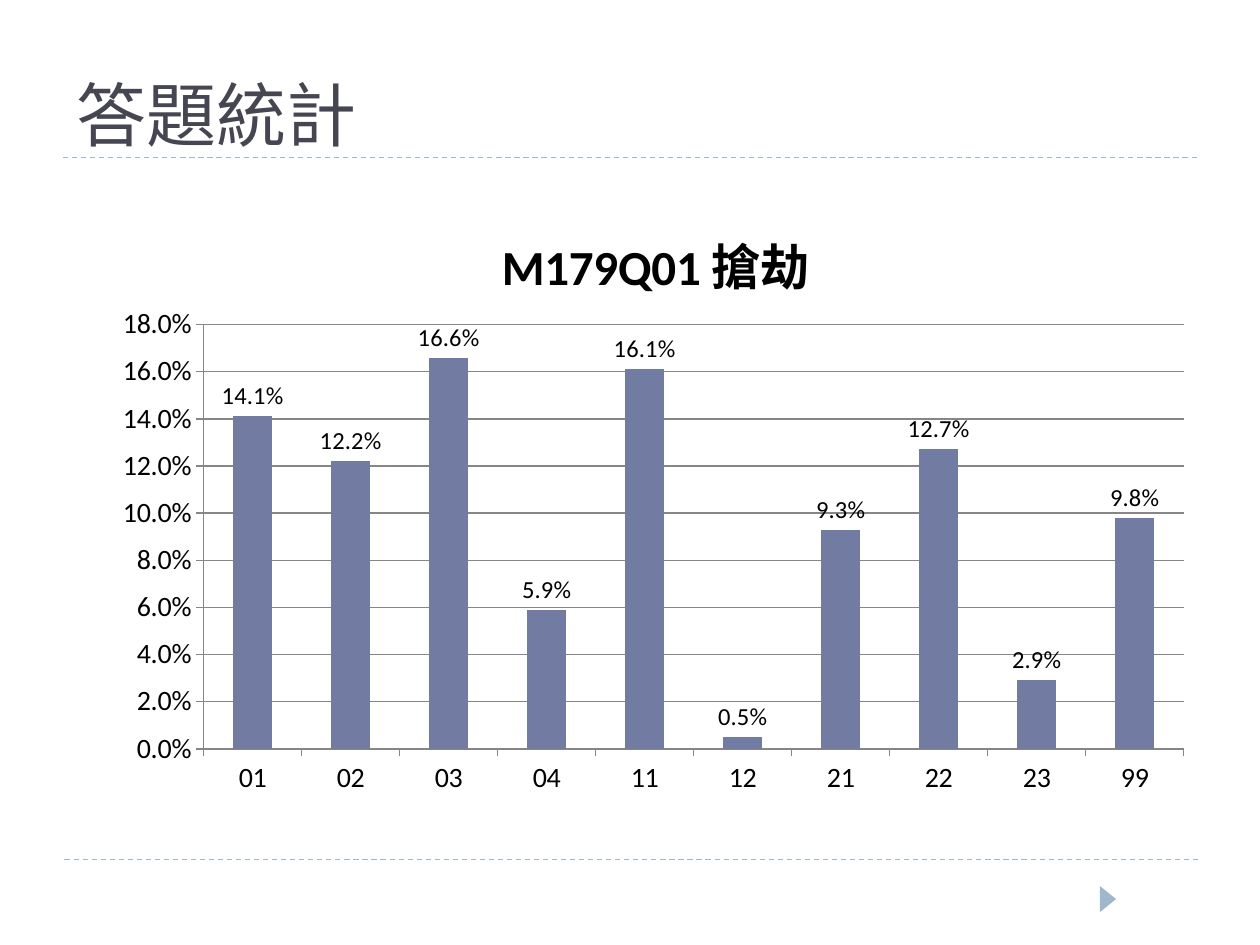
"""Build the answer statistics slide with its column chart."""
import pptx
import pptx.chart.data
import pptx.dml.color
import pptx.enum.chart
import pptx.enum.dml
import pptx.enum.shapes
import pptx.enum.text
import pptx.oxml
import pptx.oxml.ns
import pptx.util
from pptx.util import Cm

RGBColor = pptx.dml.color.RGBColor
PALE_BLUE = RGBColor(0x9F, 0xB8, 0xCD)
SLATE = RGBColor(0x46, 0x46, 0x53)
BAR_BLUE = RGBColor(0x72, 0x7C, 0xA3)
GRID_GRAY = RGBColor(0x86, 0x86, 0x86)
BLACK = RGBColor(0, 0, 0)
PERCENT = "0.0%"
PLOT_LAYOUT = {"x": 0.09, "y": 0.21, "w": 0.89, "h": 0.69}
ANSWERS = {
    "01": 0.141, "02": 0.122, "03": 0.166, "04": 0.059, "11": 0.161,
    "12": 0.005, "21": 0.093, "22": 0.127, "23": 0.029, "99": 0.098,
}


def apply(target, values):
    for name, value in values.items():
        setattr(target, name, value)


class SlideBuilder:
    def __init__(self, deck):
        self.page = deck.slides.add_slide(deck.slide_layouts[6])

    def font(self, font, size, color=BLACK, name="Calibri", bold=False):
        apply(font, {"size": pptx.util.Pt(size), "name": name, "bold": bold})
        font.color.rgb = color

    def rule(self, left, top, width):
        line = self.page.shapes.add_connector(
            pptx.enum.shapes.MSO_CONNECTOR.STRAIGHT, left, top, left + width, top)
        line.line.color.rgb = PALE_BLUE
        apply(line.line, {"width": pptx.util.Pt(0.75),
                          "dash_style": pptx.enum.dml.MSO_LINE.DASH})
        line._element.spPr.append(pptx.oxml.parse_xml(
            f"<a:effectLst {pptx.oxml.ns.nsdecls('a')}/>"))

    def marker(self, left, top, width, height):
        shape = self.page.shapes.add_shape(
            pptx.enum.shapes.MSO_SHAPE.ISOSCELES_TRIANGLE, left, top, width, height)
        shape.rotation = 90
        shape.shadow.inherit = False
        shape.fill.solid()
        shape.fill.fore_color.rgb = PALE_BLUE
        shape.line.fill.background()

    def heading(self, text, left, top, width, height):
        box = self.page.shapes.add_textbox(left, top, width, height)
        apply(box.text_frame, {
            "word_wrap": True,
            "vertical_anchor": pptx.enum.text.MSO_ANCHOR.BOTTOM})
        span = box.text_frame.paragraphs[0].add_run()
        span.text = text
        self.font(span.font, 40, SLATE, "Times New Roman")

    def axis(self, axis):
        self.font(axis.tick_labels.font, 16)
        axis.major_tick_mark = pptx.enum.chart.XL_TICK_MARK.OUTSIDE
        axis.format.line.color.rgb = GRID_GRAY

    def column_chart(self, title, answers, left, top, width, height):
        data = pptx.chart.data.CategoryChartData(number_format=PERCENT)
        data.categories = list(answers)
        data.add_series("Series 1", list(answers.values()))
        chart = self.page.shapes.add_chart(
            pptx.enum.chart.XL_CHART_TYPE.COLUMN_CLUSTERED,
            left, top, width, height, data).chart
        self.font(chart.font, 10)
        apply(chart, {"has_legend": False, "has_title": True})
        chart.chart_title.include_in_layout = False
        span = chart.chart_title.text_frame.paragraphs[0].add_run()
        span.text = title
        self.font(span.font, 28, bold=True)

        self.axis(chart.category_axis)
        self.axis(chart.value_axis)
        apply(chart.value_axis, {"minimum_scale": 0, "maximum_scale": 0.18,
                                 "major_unit": 0.02, "has_major_gridlines": True})
        chart.value_axis.major_gridlines.format.line.color.rgb = GRID_GRAY
        apply(chart.value_axis.tick_labels,
              {"number_format": PERCENT, "number_format_is_linked": False})

        plot = chart.plots[0]
        apply(plot, {"gap_width": 150, "vary_by_categories": False})
        bars = plot.series[0]
        bars.format.fill.solid()
        bars.format.fill.fore_color.rgb = BAR_BLUE
        labels = bars.data_labels
        apply(labels, {
            "show_value": True, "number_format": PERCENT,
            "number_format_is_linked": False,
            "position": pptx.enum.chart.XL_LABEL_POSITION.OUTSIDE_END})
        self.font(labels.font, 14)
        self.place_plot(chart)

    def place_plot(self, chart):
        area = chart._chartSpace.chart.plotArea
        for old in area.findall(pptx.oxml.ns.qn("c:layout")):
            area.remove(old)
        modes = '<c:xMode val="edge"/><c:yMode val="edge"/>'
        sizes = "".join(f'<c:{key} val="{value}"/>'
                        for key, value in PLOT_LAYOUT.items())
        area.insert(0, pptx.oxml.parse_xml(
            f"<c:layout {pptx.oxml.ns.nsdecls('c')}><c:manualLayout>"
            f'<c:layoutTarget val="inner"/>{modes}{sizes}'
            "</c:manualLayout></c:layout>"))


def main():
    deck = pptx.Presentation()
    apply(deck, {"slide_width": Cm(25.4), "slide_height": Cm(19.05)})
    builder = SlideBuilder(deck)
    builder.rule(Cm(1.3), Cm(17.32), Cm(22.86))
    builder.rule(Cm(1.27), Cm(3.17), Cm(22.86))
    builder.marker(Cm(22.07), Cm(17.96), Cm(0.53), Cm(0.33))
    builder.heading("答題統計", Cm(1.3), Cm(0.53), Cm(18.59), Cm(2.74))
    builder.column_chart("M179Q01 搶劫", ANSWERS,
                         Cm(2.11), Cm(3.94), Cm(22.2), Cm(12.4))
    deck.save("out.pptx")


if __name__ == "__main__":
    main()
